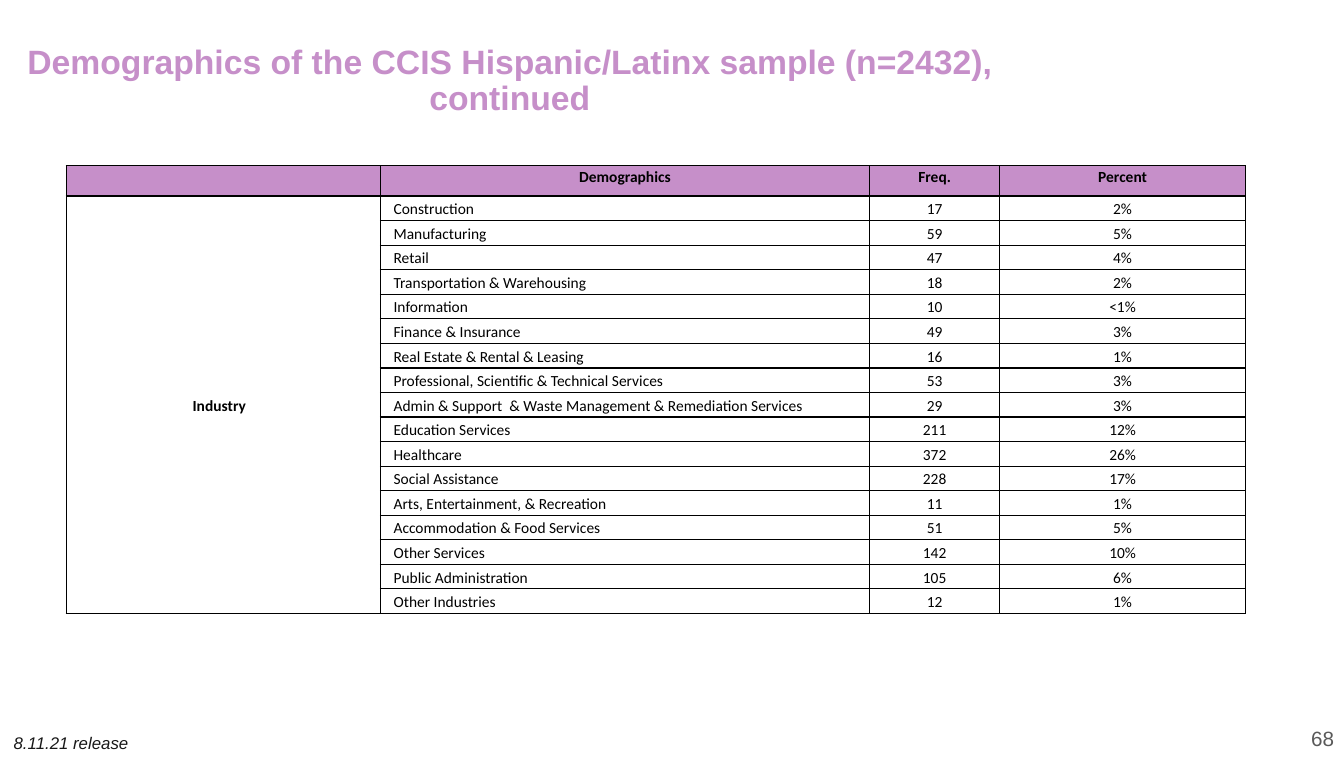
from lxml import etree
from pptx import Presentation
from pptx.dml.color import RGBColor
from pptx.enum.text import MSO_ANCHOR, PP_ALIGN
from pptx.oxml.ns import qn
from pptx.util import Inches, Pt

LEFT, CENTER, RIGHT = PP_ALIGN.LEFT, PP_ALIGN.CENTER, PP_ALIGN.RIGHT
TOP, MIDDLE = MSO_ANCHOR.TOP, MSO_ANCHOR.MIDDLE

ORCHID = RGBColor(0xC6, 0x8F, 0xC9)
BLACK = RGBColor(0x00, 0x00, 0x00)
INK = RGBColor(0x18, 0x18, 0x18)
GRAY = RGBColor(0x59, 0x59, 0x59)

GRID_COLUMNS, GRID_ROWS = 133, 75
SLIDE_WIDTH, SLIDE_HEIGHT = Inches(13.3), Inches(7.5)

HEADER_MARGINS = (0.02, 0.02, 0.02, 0.09)
GROUP_MARGINS = (0.01, 0.01, 0.09, 0.01)
BODY_MARGINS = (0.01, 0.01, 0.01, 0.01)

HEADERS = ["", "Demographics", "Freq.", "Percent"]
INDUSTRIES = [
    ("Construction", "17", "2%"),
    ("Manufacturing", "59", "5%"),
    ("Retail", "47", "4%"),
    ("Transportation & Warehousing", "18", "2%"),
    ("Information", "10", "<1%"),
    ("Finance & Insurance", "49", "3%"),
    ("Real Estate & Rental & Leasing", "16", "1%"),
    ("Professional, Scientific & Technical Services", "53", "3%"),
    ("Admin & Support  & Waste Management & Remediation Services", "29", "3%"),
    ("Education Services", "211", "12%"),
    ("Healthcare", "372", "26%"),
    ("Social Assistance", "228", "17%"),
    ("Arts, Entertainment, & Recreation", "11", "1%"),
    ("Accommodation & Food Services", "51", "5%"),
    ("Other Services", "142", "10%"),
    ("Public Administration", "105", "6%"),
    ("Other Industries", "12", "1%"),
]


def write_text(frame, text, font="Arial", size=12, color=BLACK, bold=False,
               italic=False, align=LEFT, spacing=1.0, indent=0):
    """Fill the first paragraph of a text frame; indent is in inches."""
    paragraph = frame.paragraphs[0]
    paragraph.alignment = align
    paragraph.line_spacing = spacing
    if indent:
        paragraph._p.get_or_add_pPr().set("indent", str(Inches(indent)))
    if not text:
        # An empty cell still takes its line height from the end mark.
        etree.SubElement(paragraph._p, qn("a:endParaRPr"), sz=str(round(size * 100)))
        return
    run = paragraph.add_run()
    run.text = text
    run.font.name = font
    run.font.size = Pt(size)
    run.font.color.rgb = color
    run.font.bold = bold
    run.font.italic = italic


def set_margins(target, left, top, right, bottom):
    target.margin_left, target.margin_top = Inches(left), Inches(top)
    target.margin_right, target.margin_bottom = Inches(right), Inches(bottom)


def add_borders(cell, width=1):
    properties = cell._tc.get_or_add_tcPr()
    for side in ("a:lnL", "a:lnR", "a:lnT", "a:lnB"):
        line = etree.SubElement(properties, qn(side), w=str(Pt(width)))
        fill = etree.SubElement(line, qn("a:solidFill"))
        etree.SubElement(fill, qn("a:srgbClr"), val=str(BLACK))


class DemographicsSlide:
    """Places elements in columns and rows of the slide grid."""

    def __init__(self, presentation):
        self.slide = presentation.slides.add_slide(presentation.slide_layouts[6])

    def across(self, columns):
        return round(SLIDE_WIDTH * columns / GRID_COLUMNS)

    def down(self, rows):
        return round(SLIDE_HEIGHT * rows / GRID_ROWS)

    def box(self, left, top, width, height):
        return (self.across(left), self.down(top),
                self.across(width), self.down(height))

    def add_text(self, text, area, anchor=MIDDLE, margins=(0.1, 0.05),
                 wrap=True, **text_format):
        frame = self.slide.shapes.add_textbox(*self.box(*area)).text_frame
        frame.word_wrap = wrap
        frame.vertical_anchor = anchor
        set_margins(frame, *margins, *margins)
        write_text(frame, text, **text_format)

    def add_cell(self, cell, text, margins, fill=None, anchor=TOP, **text_format):
        cell.vertical_anchor = anchor
        set_margins(cell, *margins)
        add_borders(cell)
        if fill is None:
            cell.fill.background()
        else:
            cell.fill.solid()
            cell.fill.fore_color.rgb = fill
        write_text(cell.text_frame, text, font="Calibri", size=11, **text_format)

    def add_table(self, left, top, column_widths, header_height, row_height):
        count = len(INDUSTRIES)
        area = self.box(left, top, sum(column_widths),
                        header_height + count * row_height)
        table = self.slide.shapes.add_table(count + 1, len(HEADERS), *area).table
        table.first_row = table.horz_banding = False
        for column, width in zip(table.columns, column_widths):
            column.width = self.across(width)
        for index, row in enumerate(table.rows):
            row.height = self.down(row_height if index else header_height)
        table.cell(1, 0).merge(table.cell(count, 0))

        for column, header in enumerate(HEADERS):
            self.add_cell(table.cell(0, column), header, HEADER_MARGINS,
                          fill=ORCHID, bold=True, align=CENTER)
        for row, values in enumerate(INDUSTRIES, start=1):
            group = "Industry" if row == 1 else ""
            for column, value in enumerate((group, *values)):
                is_group, is_name = column == 0, column == 1
                self.add_cell(table.cell(row, column), value,
                              GROUP_MARGINS if is_group else BODY_MARGINS,
                              anchor=MIDDLE if is_group else TOP, bold=is_group,
                              align=LEFT if is_name else CENTER,
                              indent=0.12 if is_name else 0, spacing=1.15)


def main():
    presentation = Presentation()
    presentation.slide_width, presentation.slide_height = SLIDE_WIDTH, SLIDE_HEIGHT
    page = DemographicsSlide(presentation)
    page.add_text("Demographics of the CCIS Hispanic/Latinx sample (n=2432), continued",
                  (0, 3.9, 100.9, 8.4), size=24, color=ORCHID, bold=True,
                  align=CENTER, spacing=0.9)
    page.add_text("68", (103.1, 71, 29.9, 4), size=14.7, color=GRAY, align=RIGHT)
    page.add_table(6.55, 16.4, (31.1, 48.4, 12.9, 24.3),
                   header_height=3, row_height=2.43)
    page.add_text("8.11.21 release", (0.05, 71.8, 14.2, 3.4), anchor=TOP,
                  margins=(0.13, 0.07), wrap=False, color=INK, italic=True)
    presentation.save("out.pptx")


if __name__ == "__main__":
    main()
